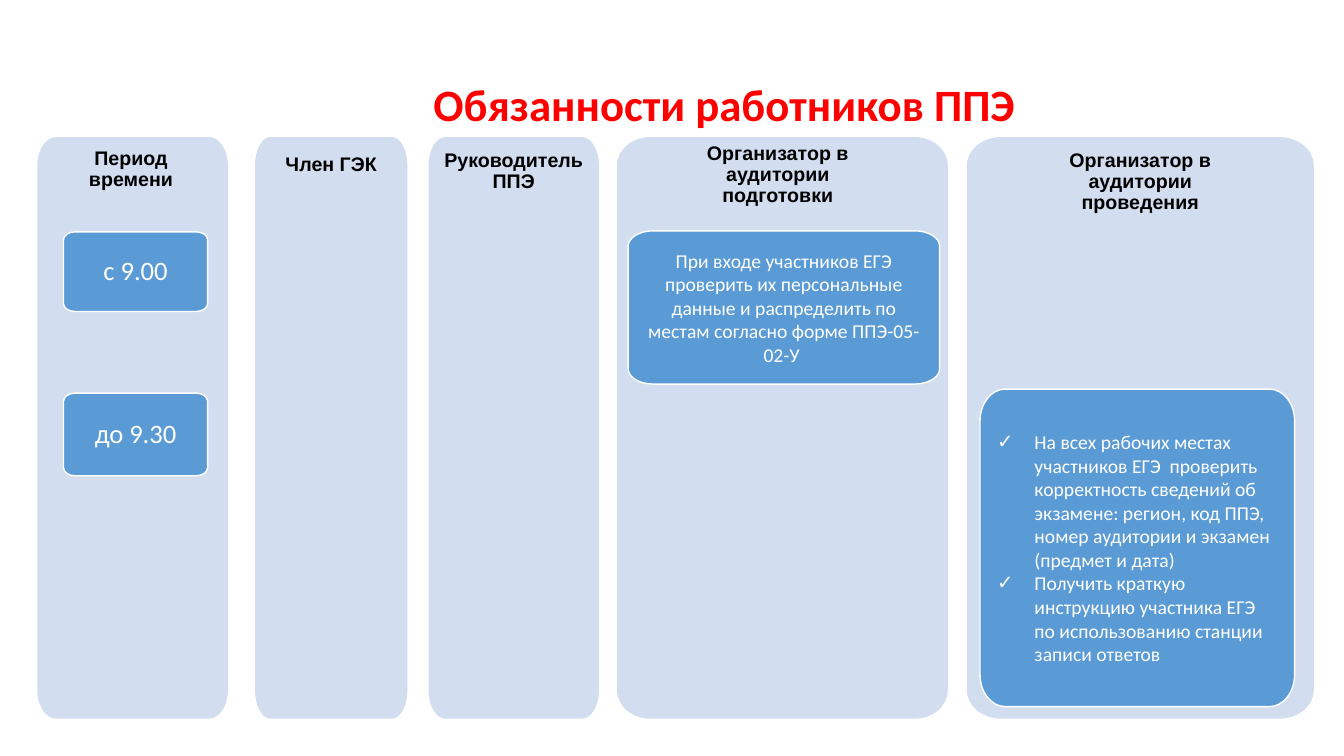
from dataclasses import dataclass

from lxml import etree
from pptx import Presentation
from pptx import util as u
from pptx.dml.color import RGBColor
from pptx.enum import text
from pptx.oxml import ns

PALE_BLUE = RGBColor(0xD2, 0xDE, 0xEF)
BLUE = RGBColor(0x5B, 0x9B, 0xD5)
WHITE = RGBColor(0xFF, 0xFF, 0xFF)
BLACK = RGBColor(0, 0, 0)
RED = RGBColor(0xFF, 0, 0)

COLUMN_TOP, COLUMN_HEIGHT = 1.36, 5.77
CURVE_PULL = 0.55  # share of the way from a curve's end to the corner


@dataclass
class Column:
    left: float
    width: float


@dataclass
class Card:
    left: float
    top: float
    width: float
    height: float
    lines: list[str]
    size: int = 14
    bulleted: bool = False
    spacing: float = 1.0


@dataclass
class Label:
    left: float
    top: float
    width: float
    height: float
    words: str
    size: int = 14
    font: str = "Arial"
    color: RGBColor = BLACK
    spacing: float = 0.9
    wrap: bool = True


COLUMNS = [
    Column(0.37, 1.89),
    Column(2.53, 1.51),
    Column(4.25, 1.69),
    Column(6.12, 3.28),
    Column(9.59, 3.44),
]

CARDS = [
    Card(9.72, 3.86, 3.12, 3.15, [
        "На всех рабочих местах участников ЕГЭ  проверить корректность сведений "
        "об экзамене: регион, код ППЭ, номер аудитории и экзамен (предмет и дата)",
        "Получить краткую инструкцию участника ЕГЭ по использованию станции "
        "записи ответов",
    ], bulleted=True),
    Card(6.23, 2.29, 3.09, 1.52, [
        "При входе участников ЕГЭ проверить их персональные данные и "
        "распределить по местам согласно форме ППЭ-05-02-У ",
    ]),
    Card(0.63, 2.3, 1.43, 0.79, ["с 9.00"], size=19, spacing=0.9),
    Card(0.63, 3.9, 1.43, 0.82, ["до 9.30"], size=19, spacing=0.9),
]

LABELS = [
    Label(0.46, 1.41, 1.68, 0.54, "Период времени"),
    Label(2.71, 1.47, 1.15, 0.33, "Член ГЭК", wrap=False),
    Label(4.05, 1.43, 2.09, 0.54, "Руководитель ППЭ"),
    Label(6.6, 1.36, 2.23, 0.76, "Организатор в аудитории подготовки"),
    Label(10.23, 1.43, 2.16, 0.76, "Организатор в аудитории проведения"),
    Label(1.56, 0.7, 11.25, 0.66, "Обязанности работников ППЭ",
          size=32, font="Calibri", color=RED, spacing=1.0),
]


def round_corners(panel) -> None:
    """Turn every second segment of the outline into a quarter ellipse."""
    points = list(panel._element.iter(ns.qn("a:pt")))
    places = [(int(point.get("x")), int(point.get("y"))) for point in points]
    for end in range(1, len(points), 2):
        start_place, end_place = places[end - 1], places[end]
        if end % 4 == 1:
            corner = (start_place[0], end_place[1])
        else:
            corner = (end_place[0], start_place[1])
        segment = points[end].getparent()
        segment.tag = ns.qn("a:cubicBezTo")
        for index, place in enumerate((start_place, end_place)):
            x, y = (round(a + CURVE_PULL * (b - a)) for a, b in zip(place, corner))
            control = etree.Element(ns.qn("a:pt"), x=str(x), y=str(y))
            segment.insert(index, control)


def add_panel(page, left: float, top: float, width: float, height: float,
              radius_x: float, radius_y: float, color: RGBColor):
    """Draw a filled panel whose corners are quarter ellipses."""
    right, bottom = left + width, top + height
    outline = [
        (left, top + radius_y), (left + radius_x, top),
        (right - radius_x, top), (right, top + radius_y),
        (right, bottom - radius_y), (right - radius_x, bottom),
        (left + radius_x, bottom), (left, bottom - radius_y),
    ]
    points = [(u.Inches(x), u.Inches(y)) for x, y in outline]
    builder = page.shapes.build_freeform(*points[0])
    builder.add_line_segments(points[1:], close=False)
    builder.add_line_segments(points[:1], close=True)
    panel = builder.convert_to_shape()
    round_corners(panel)
    panel.shadow.inherit = False
    panel.fill.solid()
    panel.fill.fore_color.rgb = color
    panel.line.fill.background()
    return panel


def set_margins(frame, side: float, end: float) -> None:
    frame.margin_left = frame.margin_right = u.Inches(side)
    frame.margin_top = frame.margin_bottom = u.Inches(end)


def add_check_mark(para) -> None:
    properties = para._p.get_or_add_pPr()
    properties.set("marL", str(u.Inches(0.37)))
    properties.set("indent", str(-u.Inches(0.37)))
    etree.SubElement(properties, ns.qn("a:buFont")).set("typeface", "Arial")
    etree.SubElement(properties, ns.qn("a:buChar")).set("char", "✓")


def format_para(para, size: int, font: str, color: RGBColor,
                spacing: float, bold: bool = False) -> None:
    para.line_spacing = spacing
    for span in para.runs:
        span.font.size = u.Pt(size)
        span.font.name = font
        span.font.bold = bold
        span.font.color.rgb = color


def add_card(page, card: Card) -> None:
    box = add_panel(page, card.left, card.top, card.width, card.height,
                    card.width * 0.08, card.height * 0.1, BLUE)
    box.line.color.rgb = WHITE
    box.line.width = u.Pt(1)
    frame = box.text_frame
    frame.word_wrap = True
    frame.vertical_anchor = text.MSO_ANCHOR.MIDDLE
    set_margins(frame, 0.17, 0.14)
    frame.text = "\n".join(card.lines)
    for para in frame.paragraphs:
        if card.bulleted:
            add_check_mark(para)
            para.alignment = text.PP_ALIGN.LEFT
        else:
            para.alignment = text.PP_ALIGN.CENTER
        format_para(para, card.size, "Calibri", WHITE, card.spacing)


def add_label(page, label: Label) -> None:
    box = page.shapes.add_textbox(u.Inches(label.left), u.Inches(label.top),
                                  u.Inches(label.width), u.Inches(label.height))
    frame = box.text_frame
    frame.word_wrap = label.wrap
    frame.auto_size = text.MSO_AUTO_SIZE.SHAPE_TO_FIT_TEXT
    set_margins(frame, 0.12, 0.06)
    frame.text = label.words
    para = frame.paragraphs[0]
    para.alignment = text.PP_ALIGN.CENTER
    format_para(para, label.size, label.font, label.color, label.spacing, bold=True)


def main() -> None:
    deck = Presentation()
    deck.slide_width, deck.slide_height = u.Inches(13.33), u.Inches(7.5)
    page = deck.slides.add_slide(deck.slide_layouts[6])

    # Background columns
    for column in COLUMNS:
        add_panel(page, column.left, COLUMN_TOP, column.width, COLUMN_HEIGHT,
                  column.width * 0.1, 0.28, PALE_BLUE)

    # Times and duties
    for card in CARDS:
        add_card(page, card)

    # Column headings and slide title
    for label in LABELS:
        add_label(page, label)

    deck.save("out.pptx")


if __name__ == "__main__":
    main()
